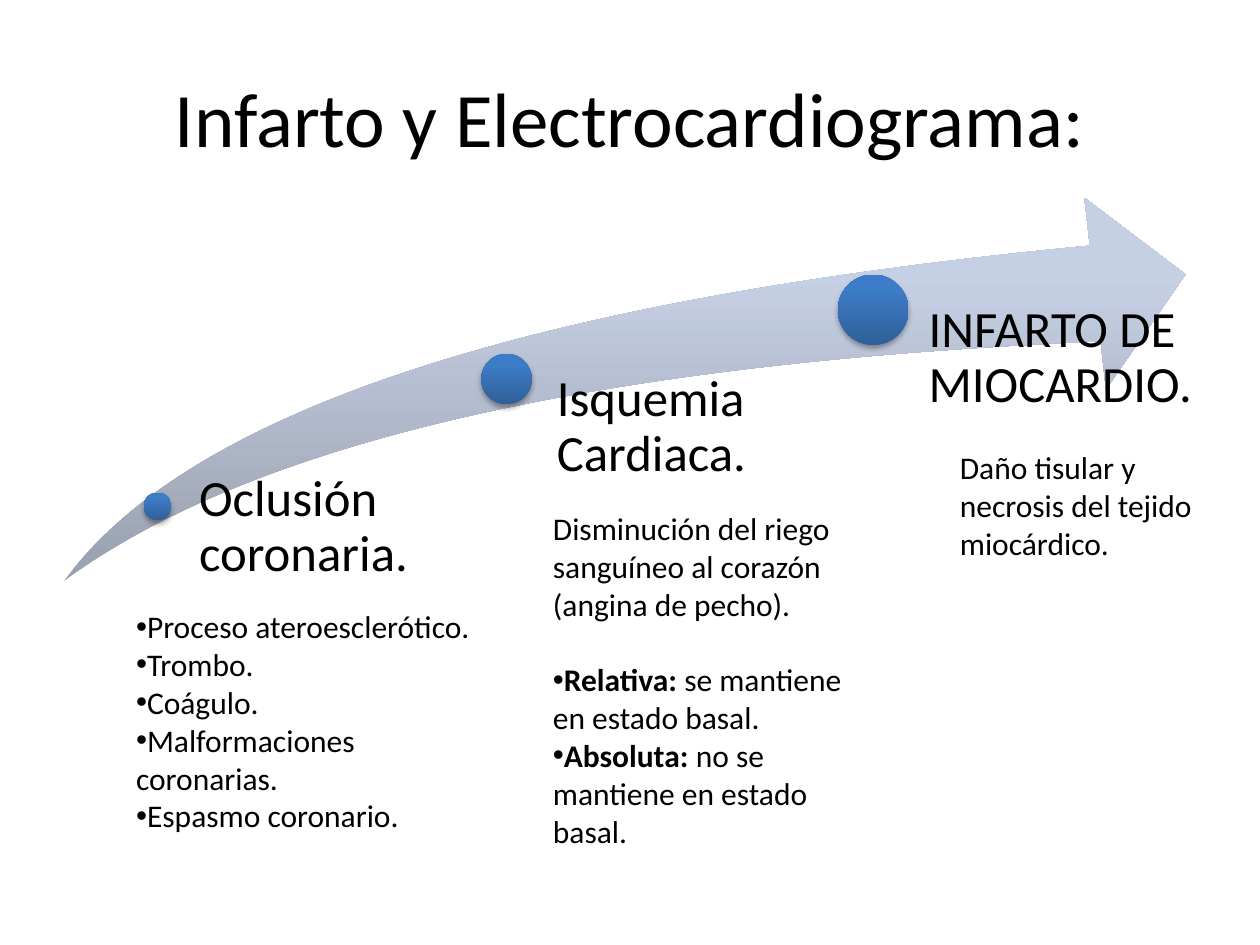
from dataclasses import dataclass

import pptx
import pptx.dml.color
import pptx.enum.shapes
import pptx.enum.text
import pptx.oxml
import pptx.oxml.ns
import pptx.util
from pptx.util import Inches

FONT = "Calibri"
COLORS = {"text": "000000", "shadow": "000000",
          "arrow_dark": "99A0AF", "arrow_mid": "C6D0E4", "arrow_light": "C7D1E5",
          "dot_dark": "2F5F99", "dot_mid": "3D7CC7", "dot_light": "3A7CCB"}
SHAPES = pptx.enum.shapes.MSO_SHAPE
NO_FIT = pptx.enum.text.MSO_AUTO_SIZE.NONE


@dataclass(frozen=True)
class Box:
    left: float
    top: float
    width: float
    height: float

    def lengths(self) -> tuple:
        return tuple(Inches(v) for v in (self.left, self.top, self.width, self.height))


@dataclass(frozen=True)
class Item:
    text: str
    lead: str = ""
    bullet: bool = True
    before: float = 0


@dataclass(frozen=True)
class Stage:
    dot: Box
    heading: str
    heading_box: Box
    indent: float
    details: tuple[Item, ...]
    details_box: Box


STAGES = (
    Stage(Box(1.14, 3.91, 0.22, 0.22), "Oclusión coronaria.",
          Box(1.46, 3.75, 1.99, 1.54), 0.12,
          (Item("Proceso ateroesclerótico."), Item("Trombo."), Item("Coágulo."),
           Item("Malformaciones coronarias."), Item("Espasmo coronario.")),
          Box(0.98, 4.77, 3.07, 2.22)),
    Stage(Box(3.82, 2.81, 0.4, 0.4), "Isquemia Cardiaca.",
          Box(4.21, 2.96, 2.05, 2.91), 0.21,
          (Item("Disminución del riego sanguíneo al corazón (angina de pecho).", bullet=False),
           Item("se mantiene en estado basal.", lead="Relativa: ", before=21.7),
           Item("no se mantiene en estado basal.", lead="Absoluta: ")),
          Box(4.29, 3.99, 2.6, 2.83)),
    Stage(Box(6.65, 2.18, 0.56, 0.56), "INFARTO DE MIOCARDIO.",
          Box(7.08, 2.41, 2.7, 3.71), 0.29,
          (Item("Daño tisular y necrosis del tejido miocárdico.", bullet=False),),
          Box(7.52, 3.51, 2.2, 1.01)),
)


def dml(tag: str, content: str = "", attributes: str = ""):
    """Parse one DrawingML element."""
    return pptx.oxml.parse_xml(
        f'<a:{tag} {pptx.oxml.ns.nsdecls("a")} {attributes}>{content}</a:{tag}>')


def style_font(font, size: float) -> None:
    font.name = FONT
    font.size = pptx.util.Pt(size)
    font.color.rgb = pptx.dml.color.RGBColor.from_string(COLORS["text"])


def add_shaded_shape(shapes, kind, box: Box, palette: str):
    """Add a borderless shape shaded from dark at the bottom to light at the top."""
    shape = shapes.add_shape(kind, *box.lengths())
    shape.fill.gradient()
    shape.fill.gradient_angle = 90
    stops = shape.fill._fill._gradFill.gsLst
    for stop in list(stops):
        stops.remove(stop)
    for position, tone in ((0, "dark"), (80, "mid"), (100, "light")):
        color = f'<a:srgbClr val="{COLORS[palette + "_" + tone]}"/>'
        stops.append(dml("gs", color, f'pos="{position * 1000}"'))
    shape.line.fill.background()
    shape.shadow.inherit = False
    return shape


def add_dot(shapes, box: Box) -> None:
    dot = add_shaded_shape(shapes, SHAPES.OVAL, box, "dot")
    color = f'<a:srgbClr val="{COLORS["shadow"]}"><a:alpha val="35000"/></a:srgbClr>'
    effects = dot._element.spPr.find(pptx.oxml.ns.qn("a:effectLst"))
    effects.append(dml("outerShdw", color,
                       'blurRad="40000" dist="23000" dir="5400000" rotWithShape="0"'))


def add_heading(shapes, stage: Stage) -> None:
    frame = shapes.add_textbox(*stage.heading_box.lengths()).text_frame
    frame.word_wrap = True
    frame.margin_left = Inches(stage.indent)
    frame.margin_top = frame.margin_right = frame.margin_bottom = 0
    paragraph = frame.paragraphs[0]
    paragraph.text = stage.heading
    paragraph.line_spacing = 0.9
    style_font(paragraph.runs[0].font, 29)


def fill_details(frame, items: tuple[Item, ...]) -> None:
    frame.word_wrap = True
    frame.auto_size = NO_FIT
    for index, item in enumerate(items):
        paragraph = frame.paragraphs[0] if index == 0 else frame.add_paragraph()
        paragraph.space_before = pptx.util.Pt(item.before)
        properties = paragraph._p.get_or_add_pPr()
        properties.set("marL", "0")
        properties.set("indent", "0")
        if item.bullet:
            properties.append(dml("buFont", attributes='typeface="Arial"'))
            properties.append(dml("buChar", attributes='char="•"'))
        for text, bold in ((item.lead, True), (item.text, False)):
            if text:
                run = paragraph.add_run()
                run.text = text
                style_font(run.font, 18)
                run.font.bold = bold


def main() -> None:
    presentation = pptx.Presentation()
    presentation.slide_width, presentation.slide_height = Inches(10), Inches(7.5)
    slide = presentation.slides.add_slide(presentation.slide_layouts[1])
    title, body = slide.placeholders

    title.left, title.top, title.width, title.height = Box(0.5, 0.3, 9, 1.25).lengths()
    title.text_frame.text = "Infarto y Electrocardiograma:"
    style_font(title.text_frame.paragraphs[0].runs[0].font, 44)

    diagram = slide.shapes.add_group_shape().shapes
    arrow = add_shaded_shape(diagram, SHAPES.SWOOSH_ARROW, Box(0.51, 1.57, 8.9, 3.04), "arrow")
    arrow.adjustments[0] = arrow.adjustments[1] = 0.25
    for stage in STAGES:
        add_dot(diagram, stage.dot)
        add_heading(diagram, stage)

    first, *others = STAGES
    body.left, body.top, body.width, body.height = first.details_box.lengths()
    fill_details(body.text_frame, first.details)
    for stage in others:
        details = slide.shapes.add_textbox(*stage.details_box.lengths())
        fill_details(details.text_frame, stage.details)

    presentation.save("out.pptx")


if __name__ == "__main__":
    main()
